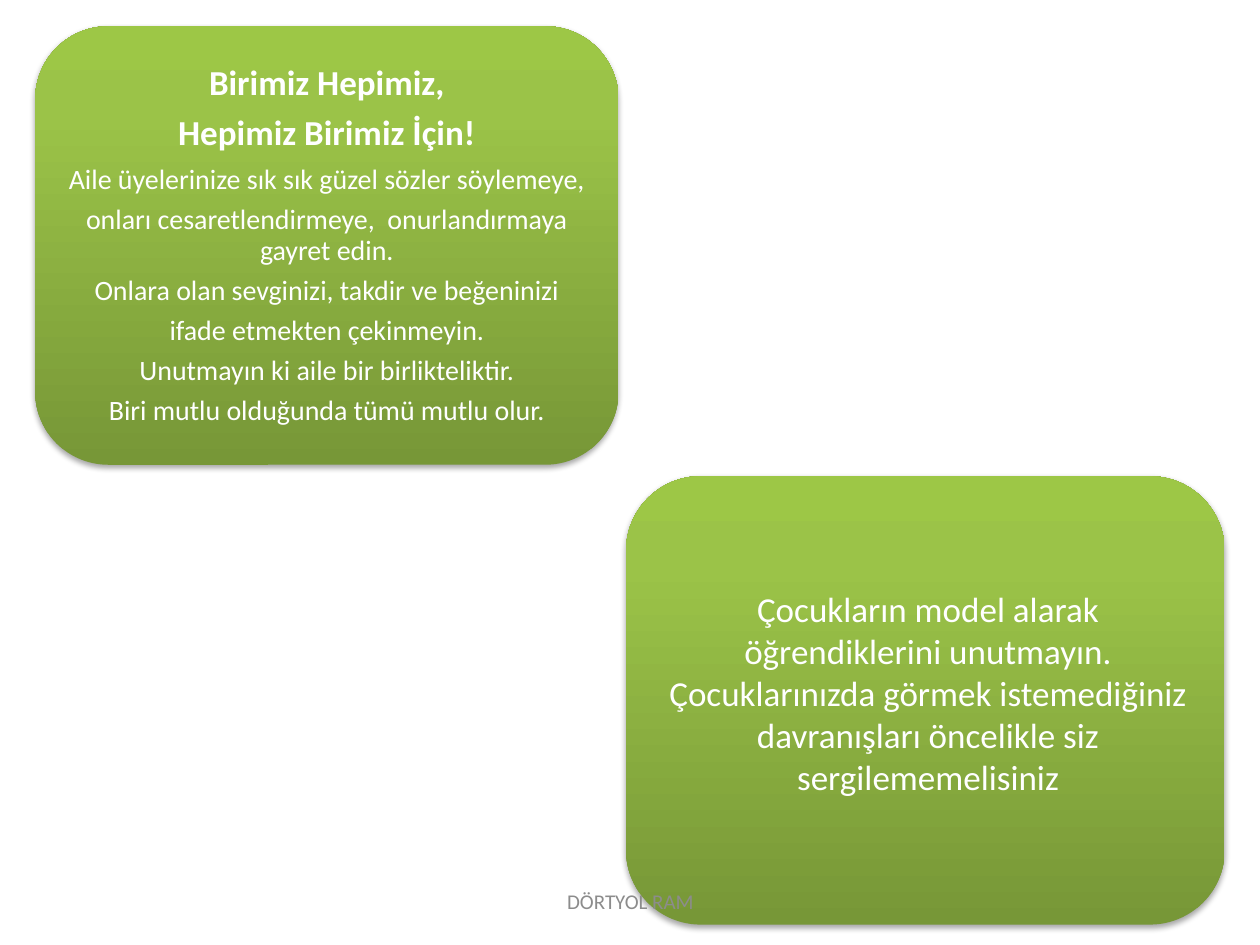
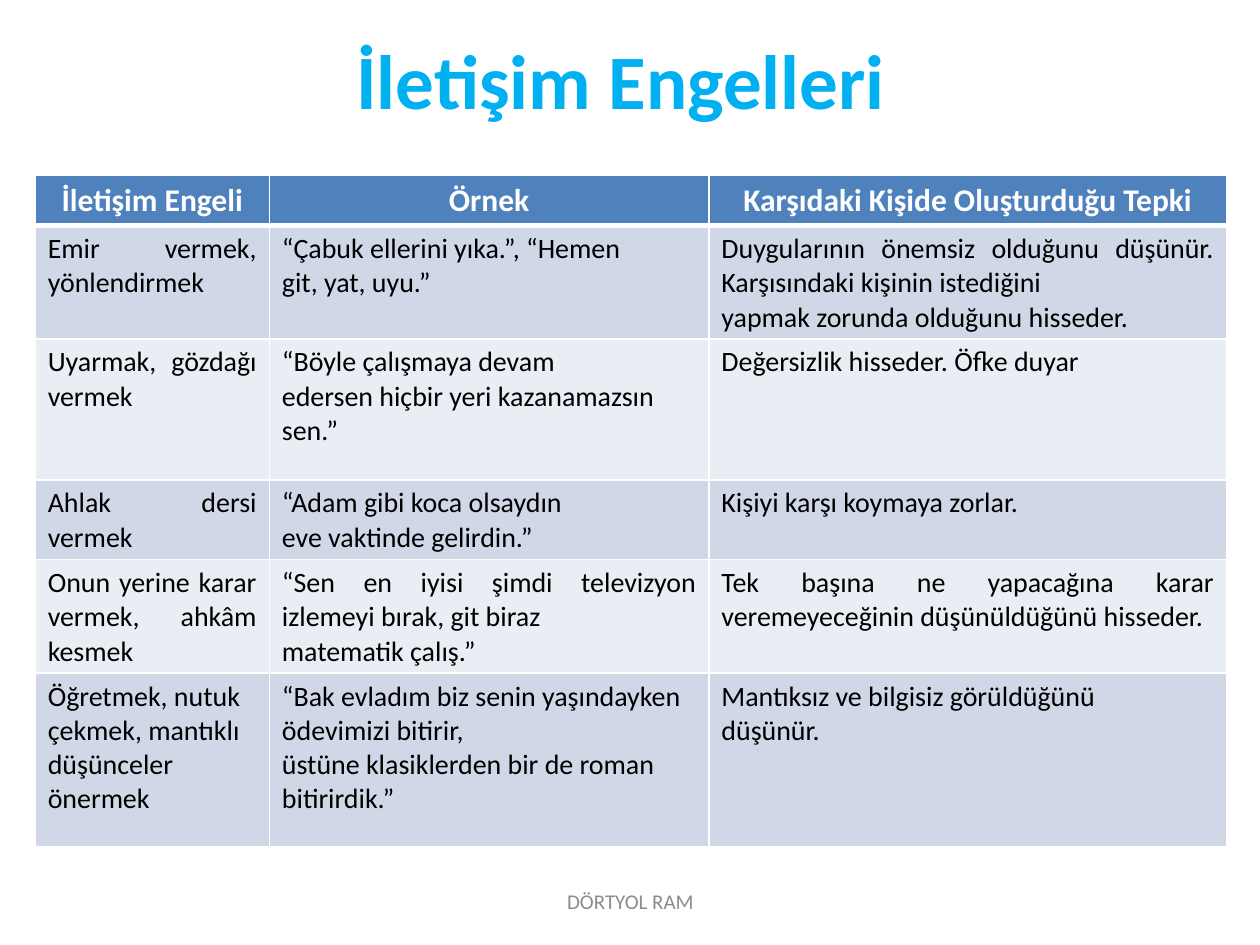
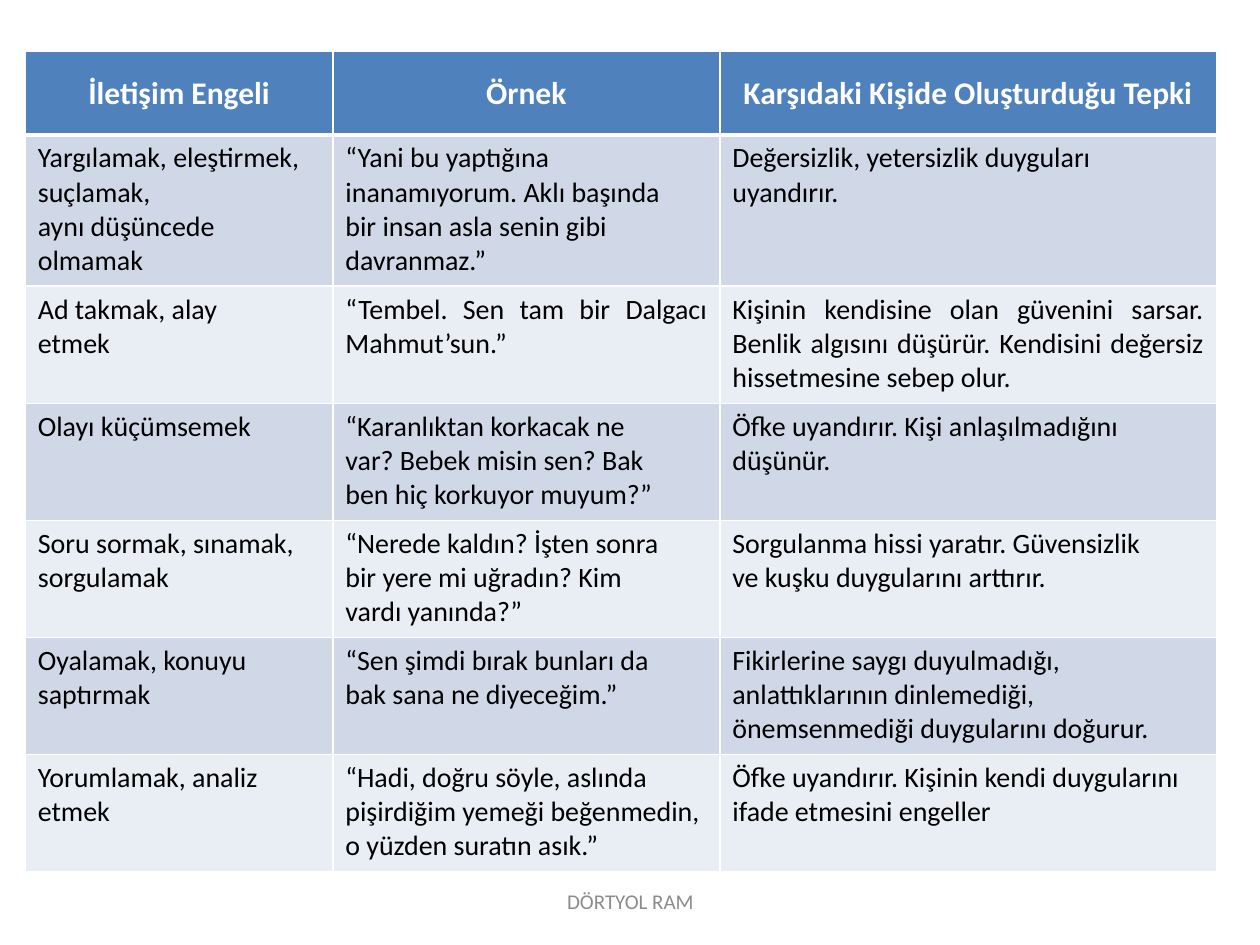
from lxml import etree
from pptx import Presentation
from pptx.dml.color import RGBColor
from pptx.enum.shapes import MSO_SHAPE
from pptx.enum.text import MSO_ANCHOR, PP_ALIGN
from pptx.oxml.ns import qn
from pptx.util import Cm, Pt

ROUNDED = MSO_SHAPE.ROUNDED_RECTANGLE
TOP, MIDDLE = MSO_ANCHOR.TOP, MSO_ANCHOR.MIDDLE
LEFT, CENTER, JUSTIFY = PP_ALIGN.LEFT, PP_ALIGN.CENTER, PP_ALIGN.JUSTIFY

COLORS = {
    "white": "FFFFFF",
    "black": "000000",
    "title": "00B0F0",
    "footer": "8C8C8C",
    "header": "4F81BD",
    "band_dark": "D0D8E8",
    "band_light": "E9EDF4",
}
CARD_STOPS = [(0, "779737"), (80, "9BC348"), (100, "9DC746")]

FONTS = {
    "title": ({"size": Pt(44), "bold": True}, "title"),
    "footer": ({"size": Pt(12), "bold": False}, "footer"),
    "card_head": ({"size": Pt(20), "bold": True}, "white"),
    "card_large": ({"size": Pt(20), "bold": False}, "white"),
    "card_small": ({"size": Pt(16), "bold": False}, "white"),
    "table_head": ({"size": Pt(18), "bold": True}, "white"),
    "table_body": ({"size": Pt(16), "bold": False}, "black"),
}
CARD_HEAD_FORMAT = {"line_spacing": 0.9, "space_after": Pt(7)}
CARD_BODY_FORMAT = {"line_spacing": 0.9, "space_after": Pt(5.6)}

TABLE_HEADER = ["İletişim Engeli", "Örnek", "Karşıdaki Kişide Oluşturduğu Tepki"]

UNITY_HEAD = ["Birimiz Hepimiz,", "Hepimiz Birimiz İçin!"]
UNITY_BODY = [
    "Aile üyelerinize sık sık güzel sözler söylemeye,",
    "onları cesaretlendirmeye,  onurlandırmaya gayret edin.",
    "Onlara olan sevginizi, takdir ve beğeninizi",
    "ifade etmekten çekinmeyin.",
    "Unutmayın ki aile bir birlikteliktir.",
    "Biri mutlu olduğunda tümü mutlu olur.",
]
ROLE_MODEL = [
    "Çocukların model alarak öğrendiklerini unutmayın. Çocuklarınızda görmek istemediğiniz",
    "davranışları öncelikle siz sergilememelisiniz",
]

COMMANDING_ROWS = [
    (JUSTIFY, [
        "Emir vermek, yönlendirmek",
        "“Çabuk ellerini yıka.”, “Hemen\ngit, yat, uyu.”",
        "Duygularının önemsiz olduğunu düşünür. Karşısındaki kişinin istediğini\n"
        "yapmak zorunda olduğunu hisseder."]),
    (JUSTIFY, [
        "Uyarmak, gözdağı vermek",
        "“Böyle çalışmaya devam\nedersen hiçbir yeri kazanamazsın\nsen.”",
        "Değersizlik hisseder. Öfke duyar"]),
    (JUSTIFY, [
        "Ahlak dersi vermek",
        "“Adam gibi koca olsaydın\neve vaktinde gelirdin.”",
        "Kişiyi karşı koymaya zorlar."]),
    (JUSTIFY, [
        "Onun yerine karar vermek, ahkâm kesmek",
        "“Sen en iyisi şimdi televizyon izlemeyi bırak, git biraz\nmatematik çalış.”",
        "Tek başına ne yapacağına karar veremeyeceğinin düşünüldüğünü hisseder."]),
    (LEFT, [
        "Öğretmek, nutuk çekmek, mantıklı\ndüşünceler önermek",
        "“Bak evladım biz senin yaşındayken ödevimizi bitirir,\n"
        "üstüne klasiklerden bir de roman bitirirdik.”",
        "Mantıksız ve bilgisiz görüldüğünü\ndüşünür."]),
]
JUDGING_ROWS = [
    (LEFT, [
        "Yargılamak, eleştirmek, suçlamak,\naynı düşüncede olmamak",
        "“Yani bu yaptığına inanamıyorum. Aklı başında\n"
        "bir insan asla senin gibi\ndavranmaz.”",
        "Değersizlik, yetersizlik duyguları\nuyandırır."]),
    (JUSTIFY, [
        "Ad takmak, alay\netmek",
        "“Tembel. Sen tam bir Dalgacı Mahmut’sun.”",
        "Kişinin kendisine olan güvenini sarsar. Benlik algısını düşürür. "
        "Kendisini değersiz hissetmesine sebep olur."]),
    (LEFT, [
        "Olayı küçümsemek",
        "“Karanlıktan korkacak ne\nvar? Bebek misin sen? Bak\nben hiç korkuyor muyum?”",
        "Öfke uyandırır. Kişi anlaşılmadığını\ndüşünür."]),
    (LEFT, [
        "Soru sormak, sınamak, sorgulamak",
        "“Nerede kaldın? İşten sonra\nbir yere mi uğradın? Kim\nvardı yanında?”",
        "Sorgulanma hissi yaratır. Güvensizlik\nve kuşku duygularını arttırır."]),
    (LEFT, [
        "Oyalamak, konuyu\nsaptırmak",
        "“Sen şimdi bırak bunları da\nbak sana ne diyeceğim.”",
        "Fikirlerine saygı duyulmadığı,\n"
        "anlattıklarının dinlemediği, önemsenmediği duygularını doğurur."]),
    (LEFT, [
        "Yorumlamak, analiz\netmek",
        "“Hadi, doğru söyle, aslında pişirdiğim yemeği beğenmedin, o yüzden suratın asık.”",
        "Öfke uyandırır. Kişinin kendi duygularını\nifade etmesini engeller"]),
]


def rgb(name):
    return RGBColor.from_string(COLORS[name])


def set_attrs(target, values):
    for key, value in values.items():
        setattr(target, key, value)


def add_xml(parent, tag, **attrs):
    child = etree.SubElement(parent, qn(tag))
    for key, value in attrs.items():
        child.set(key, str(value))
    return child


def write(tf, lines, font, align=CENTER, fmt=None):
    values, color = FONTS[font]
    for line in lines:
        p = tf.paragraphs[0]
        if p.runs:
            p = tf.add_paragraph()
        set_attrs(p, {"alignment": align, **(fmt or {})})
        r = p.add_run()
        r.text = line
        set_attrs(r.font, {"name": "Calibri", **values})
        r.font.color.rgb = rgb(color)


def add_text_box(slide, box, anchor=TOP):
    tf = slide.shapes.add_textbox(*map(Cm, box)).text_frame
    set_attrs(tf, {"word_wrap": True, "vertical_anchor": anchor})
    return tf


def add_card(slide, box):
    sp = slide.shapes.add_shape(ROUNDED, *map(Cm, box))
    sp.line.fill.background()
    sp.fill.gradient()
    sp.fill.gradient_angle = 90
    stops = sp.element.spPr.find(".//" + qn("a:gsLst"))
    for stop in list(stops):
        stops.remove(stop)
    for position, color in CARD_STOPS:
        stop = add_xml(stops, "a:gs", pos=position * 1000)
        add_xml(stop, "a:srgbClr", val=color)
    sp.shadow.inherit = False
    effects = sp.element.spPr.find(qn("a:effectLst"))
    shadow = add_xml(effects, "a:outerShdw", blurRad=Pt(3.1), dist=Pt(1.8),
                     dir=90 * 60000, rotWithShape=0)
    color = add_xml(shadow, "a:srgbClr", val=COLORS["black"])
    add_xml(color, "a:alpha", val=35000)


def set_borders(cell, widths):
    tc_pr = cell._tc.get_or_add_tcPr()
    for side, width in widths.items():
        line = add_xml(tc_pr, "a:ln" + side, w=Pt(width))
        add_xml(add_xml(line, "a:solidFill"), "a:srgbClr", val=COLORS["white"])


def add_barrier_table(slide, left, top, widths, heights, rows, header_anchor=TOP):
    rows = [(CENTER, TABLE_HEADER)] + rows
    frame = slide.shapes.add_table(len(rows), len(widths), Cm(left), Cm(top),
                                   Cm(sum(widths)), Cm(sum(heights)))
    table = frame.table
    for column, width in zip(table.columns, widths):
        column.width = Cm(width)
    for i, (align, texts) in enumerate(rows):
        table.rows[i].height = Cm(heights[i])
        band = "header" if i == 0 else "band_dark" if i % 2 else "band_light"
        font = "table_body" if i else "table_head"
        borders = {"L": 1, "R": 1, "T": 3 if i == 1 else 1, "B": 1 if i else 3}
        for j, text in enumerate(texts):
            cell = table.cell(i, j)
            cell.vertical_anchor = TOP if i else header_anchor
            set_borders(cell, borders)
            cell.fill.solid()
            cell.fill.fore_color.rgb = rgb(band)
            write(cell.text_frame, text.split("\n"), font, align)


def add_title(slide, text):
    write(add_text_box(slide, (1.09, 0, 22.86, 3.18), MIDDLE), [text], "title")


def add_footer(slide):
    write(add_text_box(slide, (8.69, 17.65, 8.04, 1.02), MIDDLE), ["DÖRTYOL RAM"], "footer")


def build_cards(slide):
    add_card(slide, (0.71, 0.53, 11.76, 8.84))
    tf = add_text_box(slide, (1.14, 0.97, 10.9, 7.98), MIDDLE)
    set_attrs(tf, {"margin_left": Cm(0.2), "margin_right": Cm(0.2),
                   "margin_top": Cm(0.1), "margin_bottom": Cm(0.1)})
    write(tf, UNITY_HEAD, "card_head", fmt=CARD_HEAD_FORMAT)
    write(tf, UNITY_BODY, "card_small", fmt=CARD_BODY_FORMAT)
    add_card(slide, (12.62, 9.6, 12.07, 9.04))
    write(add_text_box(slide, (13.11, 11.71, 11.2, 4.57)), ROLE_MODEL, "card_large")


def build_commanding(slide):
    add_title(slide, "İletişim Engelleri")
    add_barrier_table(slide, 0.71, 3.53, [4.72, 8.86, 10.44],
                      [0.89, 2.18, 2.84, 1.52, 2.18, 3.51], COMMANDING_ROWS)


def build_judging(slide):
    add_barrier_table(slide, 0.51, 1.04, [6.2, 7.8, 10.01],
                      [1.68, 3.05] + [2.36] * 5, JUDGING_ROWS, MIDDLE)


def main():
    prs = Presentation()
    set_attrs(prs, {"slide_width": Cm(25.4), "slide_height": Cm(19.05)})
    for build in (build_cards, build_commanding, build_judging):
        slide = prs.slides.add_slide(prs.slide_layouts[6])
        build(slide)
        add_footer(slide)
    prs.save("out.pptx")


if __name__ == "__main__":
    main()
